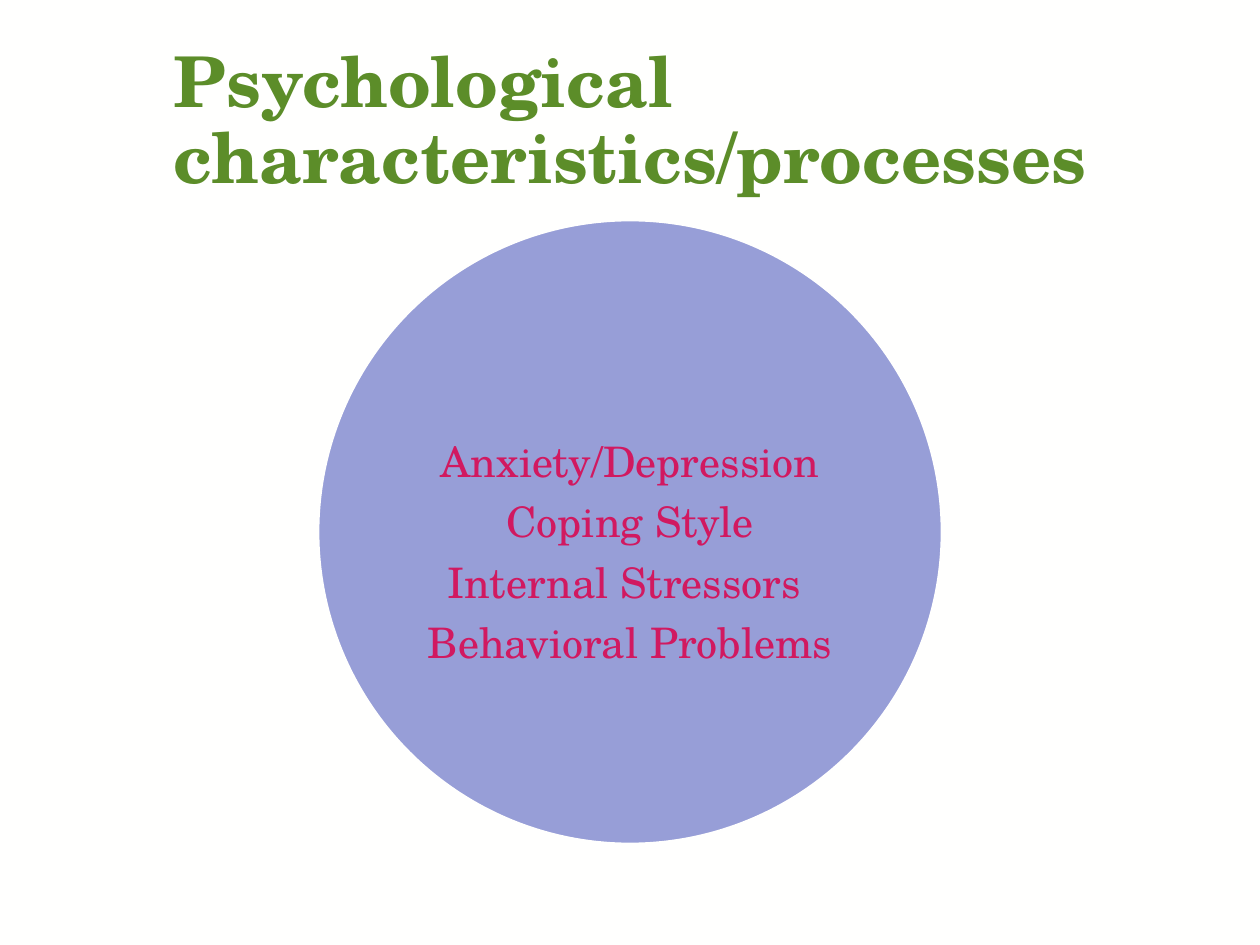
"""Build the slide on psychological characteristics and processes."""
from lxml import etree
from pptx import Presentation
from pptx.dml.color import RGBColor
from pptx.enum import shapes, text as t
from pptx.oxml import ns
from pptx.util import Pt

COLORS = {"paper": "FFFFFE", "title": "5C8D29", "circle": "959DD7", "topic": "D11960"}
FONT = "TeX Gyre Schola"


def add_text(lines, left, top, width, height, size, color, bold=False,
             align=t.PP_ALIGN.LEFT, after=0, inset=(7.2, 3.6)):
    box = page.shapes.add_textbox(Pt(left), Pt(top), Pt(width), Pt(height))
    frame = box.text_frame
    frame.word_wrap = True
    frame.vertical_anchor = t.MSO_ANCHOR.MIDDLE
    frame.margin_left = frame.margin_right = Pt(inset[0])
    frame.margin_top = frame.margin_bottom = Pt(inset[1])
    for index, line in enumerate(lines):
        para = frame.add_paragraph() if index else frame.paragraphs[0]
        para.alignment = align
        para.line_spacing = 0.9
        para.space_after = Pt(after)
        span = para.add_run()
        span.text = line
        span.font.name = FONT
        span.font.size = Pt(size)
        span.font.bold = bold
        span.font.color.rgb = RGBColor.from_string(COLORS[color])


deck = Presentation()
deck.slide_width, deck.slide_height = Pt(720), Pt(540)
page = deck.slides.add_slide(deck.slide_layouts[6])
page.background.fill.solid()
page.background.fill.fore_color.rgb = RGBColor.from_string(COLORS["paper"])

add_text(["Psychological characteristics/processes"], 92.2, 25.2, 591.1, 90,
         size=40, color="title", bold=True)

circle = page.shapes.add_shape(shapes.MSO_SHAPE.OVAL, Pt(182), Pt(126), Pt(356), Pt(356))
circle.shadow.inherit = False
circle.fill.solid()
circle.fill.fore_color.rgb = RGBColor.from_string(COLORS["circle"])
tint = circle.fill._xPr.find(".//" + ns.qn("a:srgbClr"))
etree.SubElement(tint, ns.qn("a:alpha"), val="98000")
circle.line.color.rgb = RGBColor.from_string(COLORS["paper"])
circle.line.width = Pt(1)

topics = ["Anxiety/Depression", "Coping Style", "Internal Stressors ", "Behavioral Problems"]
add_text(topics, 234, 190.8, 252, 252, size=24, color="topic",
         align=t.PP_ALIGN.CENTER, after=8.4, inset=(0, 0))

deck.save("out.pptx")
